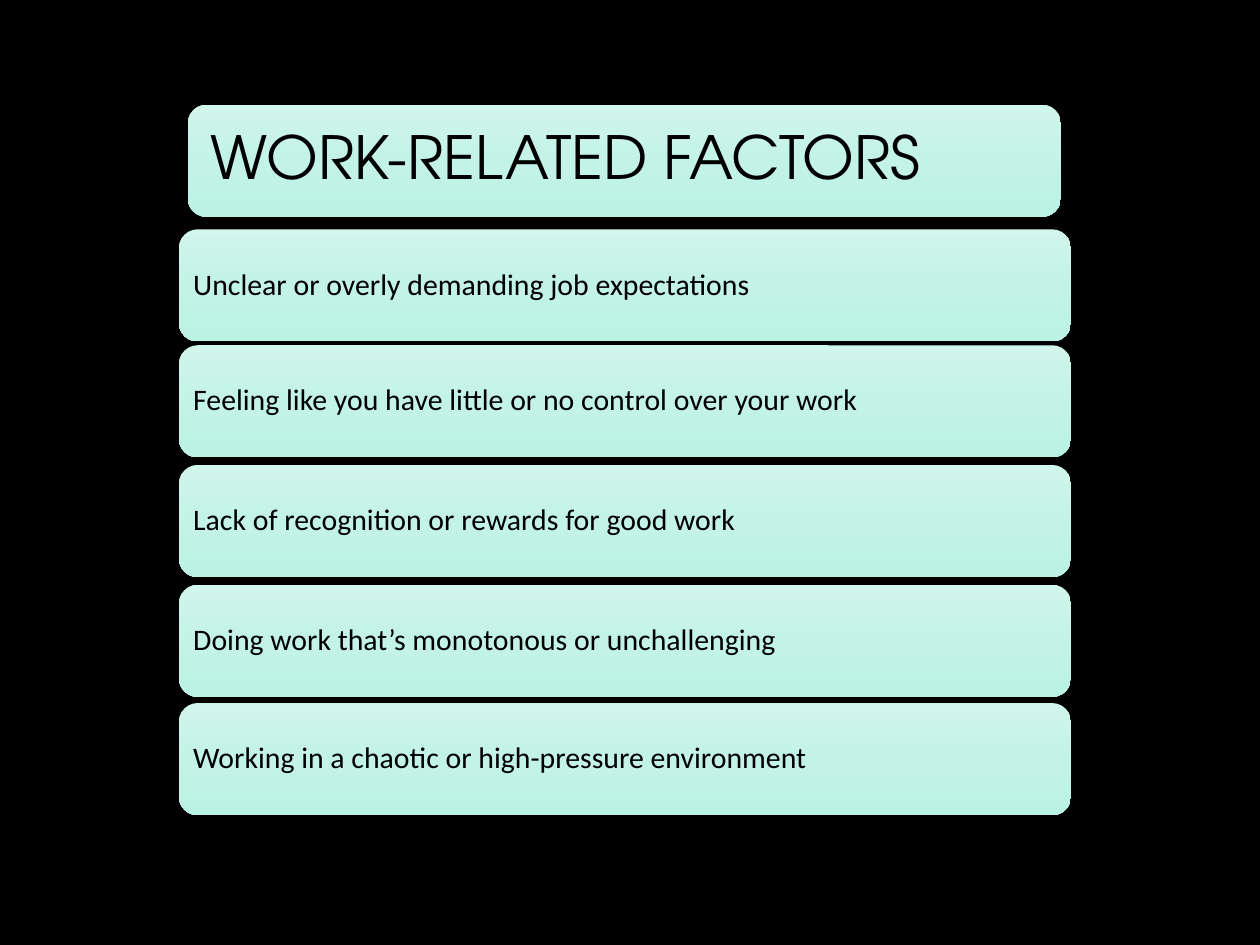
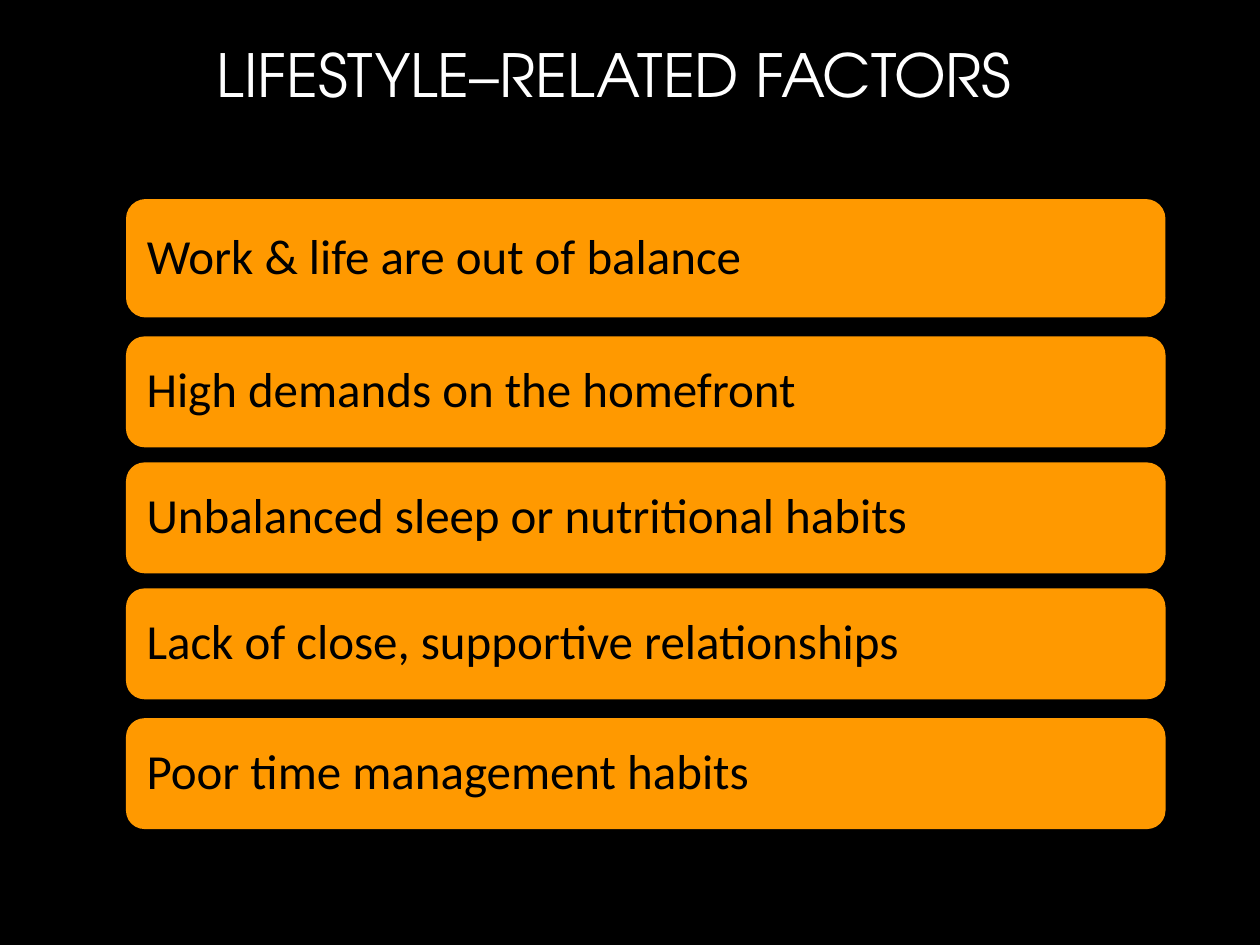
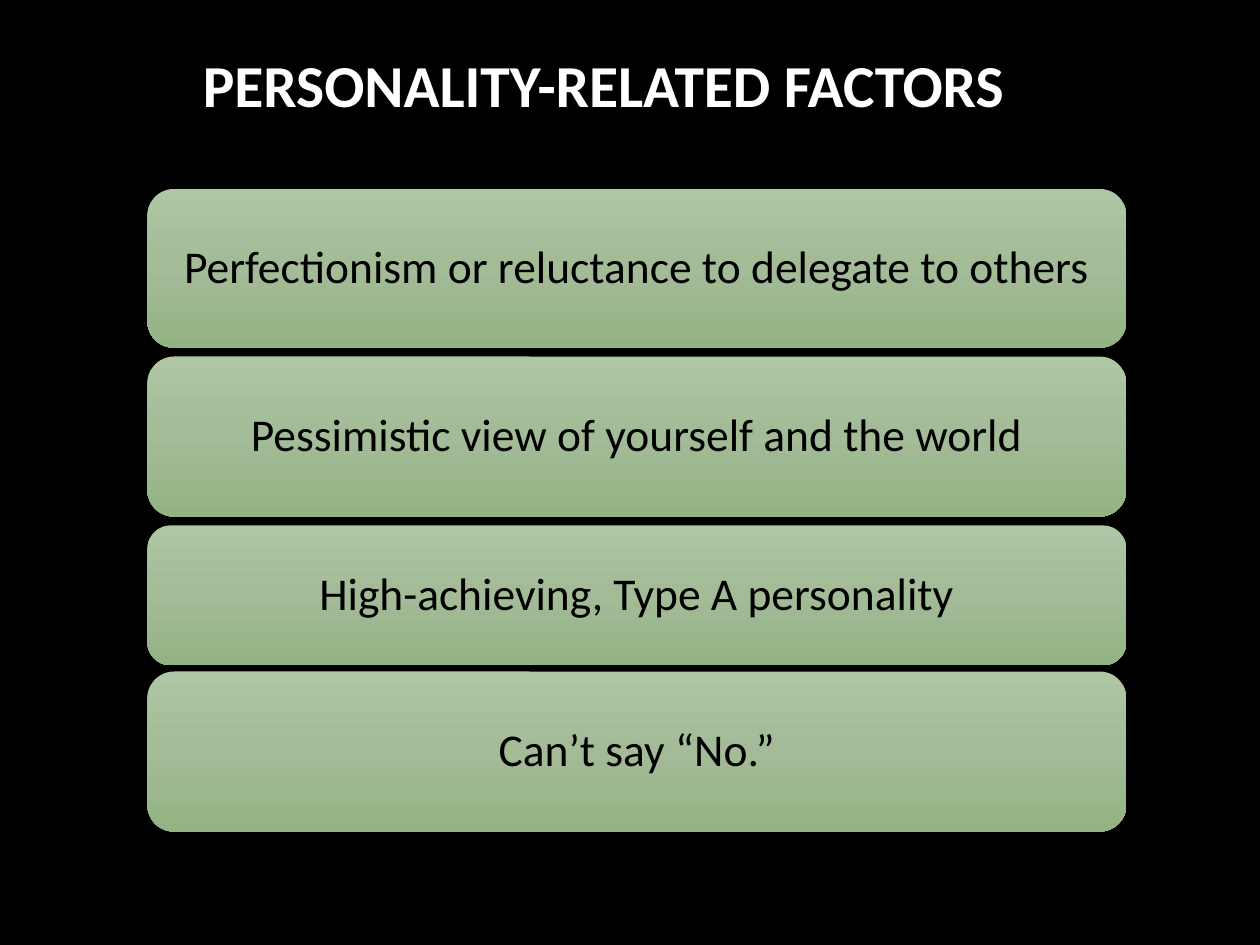
from copy import deepcopy
from dataclasses import dataclass

from pptx import Presentation
from pptx.dml.color import RGBColor
from pptx.enum import shapes, text
from pptx.oxml.ns import qn
from pptx.util import Inches, Pt


@dataclass(frozen=True)
class Theme:
    background: str = "000000"
    dark_text: str = "000000"
    light_text: str = "FFFFFF"
    mint: tuple = ("D1F6EC", "C3F2E6", "BAF3E4")
    orange: tuple = ("FF9900",)
    sage: tuple = ("AEC6A3", "A3BB97", "94B384")
    body_font: str = "Calibri"
    display_font: str = "TeX Gyre Adventor"
    title_size: int = 34
    work_size: int = 17
    lifestyle_size: int = 28
    personality_size: int = 26


THEME = Theme()
LEFT, CENTER = text.PP_ALIGN.LEFT, text.PP_ALIGN.CENTER
MIDDLE, TOP = text.MSO_ANCHOR.MIDDLE, text.MSO_ANCHOR.TOP

WORK_FACTORS = [
    (1.82, 0.89, "Unclear or overly demanding job expectations"),
    (2.74, 0.89, "Feeling like you have little or no control over your work"),
    (3.69, 0.89, "Lack of recognition or rewards for good work"),
    (4.64, 0.89, "Doing work that’s monotonous or unchallenging"),
    (5.58, 0.89, "Working in a chaotic or high-pressure environment"),
]
LIFESTYLE_FACTORS = [
    (1.58, 0.94, "Work & life are out of balance"),
    (2.67, 0.88, "High demands on the homefront"),
    (3.67, 0.88, "Unbalanced sleep or nutritional habits"),
    (4.67, 0.88, "Lack of close, supportive relationships"),
    (5.70, 0.88, "Poor time management habits"),
]
PERSONALITY_FACTORS = [
    (1.50, 1.26, "Perfectionism or reluctance to delegate to others"),
    (2.83, 1.27, "Pessimistic view of yourself and the world"),
    (4.17, 1.11, "High-achieving, Type A personality"),
    (5.33, 1.27, "Can’t say “No.”"),
]


def write(shape, wording, size, color, font=THEME.body_font, bold=False,
          align=LEFT, anchor=MIDDLE, spacing=0.9, insets=(0.1, 0.05, 0.1, 0.05)):
    """Set one paragraph in a shape; insets run left, top, right, bottom."""
    frame = shape.text_frame
    frame.word_wrap = True
    frame.vertical_anchor = anchor
    for side, inset in zip(("left", "top", "right", "bottom"), insets):
        setattr(frame, f"margin_{side}", Inches(inset))
    paragraph = frame.paragraphs[0]
    paragraph.alignment = align
    paragraph.line_spacing = spacing
    run = paragraph.add_run()
    run.text = wording
    for name, value in {"name": font, "size": Pt(size), "bold": bold}.items():
        setattr(run.font, name, value)
    run.font.color.rgb = RGBColor.from_string(color)


def paint(shape, colors):
    """Fill solid with one colour, or from top to bottom with three."""
    fill = shape.fill
    if len(colors) == 1:
        fill.solid()
        fill.fore_color.rgb = RGBColor.from_string(colors[0])
        return
    fill.gradient()
    fill.gradient_angle = 270
    stops = shape._element.spPr.find(qn("a:gradFill")).find(qn("a:gsLst"))
    stops.insert(1, deepcopy(stops[0]))
    for index, (stop, color) in enumerate(zip(fill.gradient_stops, colors)):
        stop.position = index / (len(colors) - 1)
        stop.color.rgb = RGBColor.from_string(color)


def add_bar(slide, box, wording, colors, size, inset, **style):
    bar = slide.shapes.add_shape(
        shapes.MSO_SHAPE.ROUNDED_RECTANGLE, *map(Inches, box))
    bar.shadow.inherit = False
    bar.line.fill.background()
    paint(bar, colors)
    write(bar, wording, size, THEME.dark_text, insets=(inset,) * 4, **style)


def add_factors(slide, factors, left, width, **style):
    for top, height, wording in factors:
        add_bar(slide, (left, top, width, height), wording, **style)


def add_title(slide, box, wording, **style):
    title = slide.shapes.add_textbox(*map(Inches, box))
    write(title, wording, THEME.title_size, THEME.light_text, align=CENTER, **style)


def main():
    prs = Presentation()
    prs.slide_width, prs.slide_height = Inches(10), Inches(7.5)
    backdrop = prs.slide_master.background.fill
    backdrop.solid()
    backdrop.fore_color.rgb = RGBColor.from_string(THEME.background)
    work, lifestyle, personality = (
        prs.slides.add_slide(prs.slide_layouts[6]) for _ in range(3))

    add_bar(work, (1.49, 0.83, 6.93, 0.89), "WORK-RELATED FACTORS", THEME.mint,
            THEME.title_size, 0.14, font=THEME.display_font)
    add_factors(work, WORK_FACTORS, 1.42, 7.08, colors=THEME.mint,
                size=THEME.work_size, inset=0.07)

    add_title(lifestyle, (0, 0.25, 9.75, 1.29), "LIFESTYLE–RELATED FACTORS",
              font=THEME.display_font, insets=(0.1, 0.05, 0.1, 0.6))
    add_factors(lifestyle, LIFESTYLE_FACTORS, 1, 8.25, colors=THEME.orange,
                size=THEME.lifestyle_size, inset=0.12)

    add_factors(personality, PERSONALITY_FACTORS, 1.17, 7.77, colors=THEME.sage,
                size=THEME.personality_size, inset=0.11, align=CENTER)
    add_title(personality, (0.5, 0.33, 8.58, 0.67), "PERSONALITY-RELATED FACTORS",
              bold=True, anchor=TOP, spacing=1.0)

    prs.save("out.pptx")


if __name__ == "__main__":
    main()
